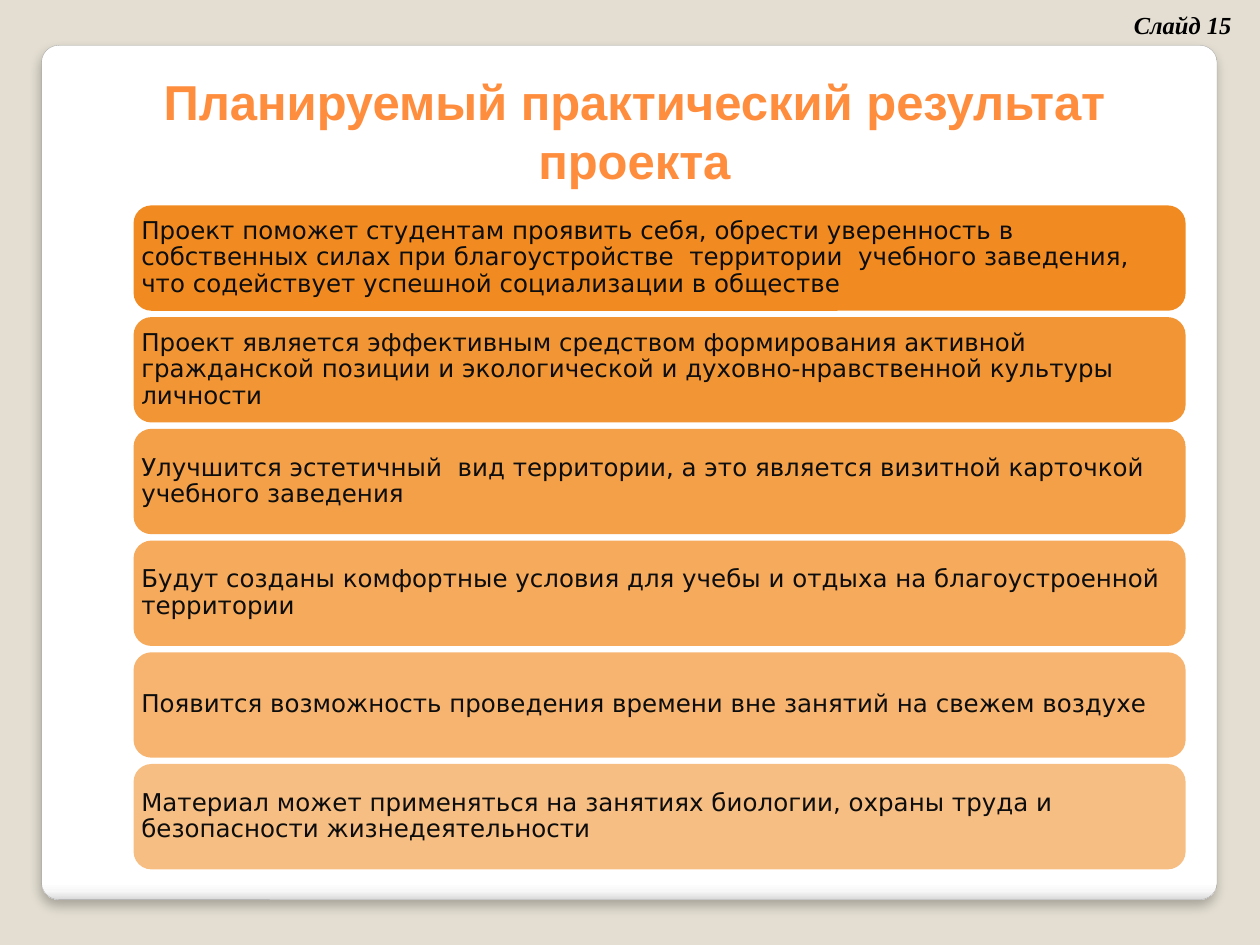
from lxml import etree
from pptx import Presentation
from pptx import util as u
from pptx.dml.color import RGBColor
from pptx.enum import shapes, text
from pptx.oxml.ns import qn

RESULTS = [
    "Проект поможет студентам проявить себя, обрести уверенность в собственных силах при благоустройстве  территории  учебного заведения, что содействует успешной социализации в обществе",
    "Проект является эффективным средством формирования активной гражданской позиции и экологической и духовно-нравственной культуры личности",
    "Улучшится эстетичный  вид территории, а это является визитной карточкой учебного заведения",
    "Будут созданы комфортные условия для учебы и отдыха на благоустроенной территории",
    "Появится возможность проведения времени вне занятий на свежем воздухе",
    "Материал может применяться на занятиях биологии, охраны труда и безопасности жизнедеятельности",
]
CARD_STOPS = [(0, "FFFFFF"), (98, "FFFFFF"), (99, "F7F7F7"), (100, "DADADA")]


def color(value):
    return RGBColor.from_string(value)


def add_element(parent, tag, **attributes):
    values = {name: str(value) for name, value in attributes.items()}
    return etree.SubElement(parent, qn(tag), values)


def add_rounded_box(slide, box, radius):
    shape = slide.shapes.add_shape(
        shapes.MSO_SHAPE.ROUNDED_RECTANGLE, *map(u.Inches, box))
    shape.adjustments[0] = radius
    shape.shadow.inherit = False
    return shape


def style_font(paragraph, name, size, hex_color, bold=False, italic=False):
    font = paragraph.font
    font.name, font.size = name, u.Pt(size)
    font.bold, font.italic = bold, italic
    font.color.rgb = color(hex_color)


def add_card(slide, box):
    card = add_rounded_box(slide, box, 0.02)
    card.line.color.rgb = color("A4A4A4")
    card.line.width = u.Pt(0.16)

    # Shading along the bottom edge
    card.fill.gradient()
    card.fill.gradient_angle = 270
    properties = card._element.spPr
    stops = properties.find(".//" + qn("a:gsLst"))
    for stop in list(stops):
        stops.remove(stop)
    for position, value in CARD_STOPS:
        stop = add_element(stops, "a:gs", pos=position * 1000)
        add_element(stop, "a:srgbClr", val=value)

    # Soft shadow below
    shadow = add_element(properties.find(qn("a:effectLst")), "a:outerShdw",
                         blurRad=u.Pt(6), dist=u.Pt(4), dir=90 * 60000,
                         algn="t", rotWithShape=0)
    shade = add_element(shadow, "a:srgbClr", val="000000")
    add_element(shade, "a:alpha", val=25000)


def add_label(slide, box, wording):
    frame = slide.shapes.add_textbox(*map(u.Inches, box)).text_frame
    frame.word_wrap = True
    frame.text = wording
    return frame


def add_title(slide, box):
    frame = add_label(slide, box, "Планируемый практический результат проекта")
    paragraph = frame.paragraphs[0]
    paragraph.alignment = text.PP_ALIGN.CENTER
    style_font(paragraph, "Arial", 28, "FF8D3E", bold=True)


def add_slide_number(slide, box):
    frame = add_label(slide, box, "Слайд 15")
    frame.margin_top = u.Inches(0.08)
    style_font(frame.paragraphs[0], "Times New Roman", 14, "000000",
               bold=True, italic=True)


def add_results(slide, box, gap=0.05):
    left, top, width, height = box
    bar_height = (height - gap * (len(RESULTS) - 1)) / len(RESULTS)
    for index, result in enumerate(RESULTS):
        bar_top = top + index * (bar_height + gap)
        bar = add_rounded_box(slide, (left, bar_top, width, bar_height), 0.17)
        bar.line.fill.background()

        # Each bar is paler than the one above
        bar.fill.solid()
        bar.fill.fore_color.rgb = color("F07F09")
        fill_color = bar._element.spPr.find(".//" + qn("a:srgbClr"))
        add_element(fill_color, "a:alpha", val=(90 - 8 * index) * 1000)

        frame = bar.text_frame
        frame.word_wrap = True
        frame.vertical_anchor = text.MSO_ANCHOR.MIDDLE
        frame.margin_left = frame.margin_right = u.Inches(0.02)
        frame.margin_top = frame.margin_bottom = u.Inches(0.02)
        frame.text = result
        paragraph = frame.paragraphs[0]
        paragraph.alignment = text.PP_ALIGN.LEFT
        paragraph.line_spacing = 0.9
        style_font(paragraph, "DejaVu Sans", 14, "0D0D0D")


def main():
    presentation = Presentation()
    presentation.slide_width = u.Inches(10)
    presentation.slide_height = u.Inches(7.5)
    slide = presentation.slides.add_slide(presentation.slide_layouts[6])
    slide.background.fill.solid()
    slide.background.fill.fore_color.rgb = color("E3DED1")

    add_card(slide, (0.33, 0.36, 9.33, 6.78))
    add_title(slide, (0.62, 0.52, 8.83, 1.34))
    add_slide_number(slide, (8.9, 0, 1.06, 0.39))
    add_results(slide, (1.06, 1.63, 8.35, 5.27))
    presentation.save("out.pptx")


if __name__ == "__main__":
    main()
